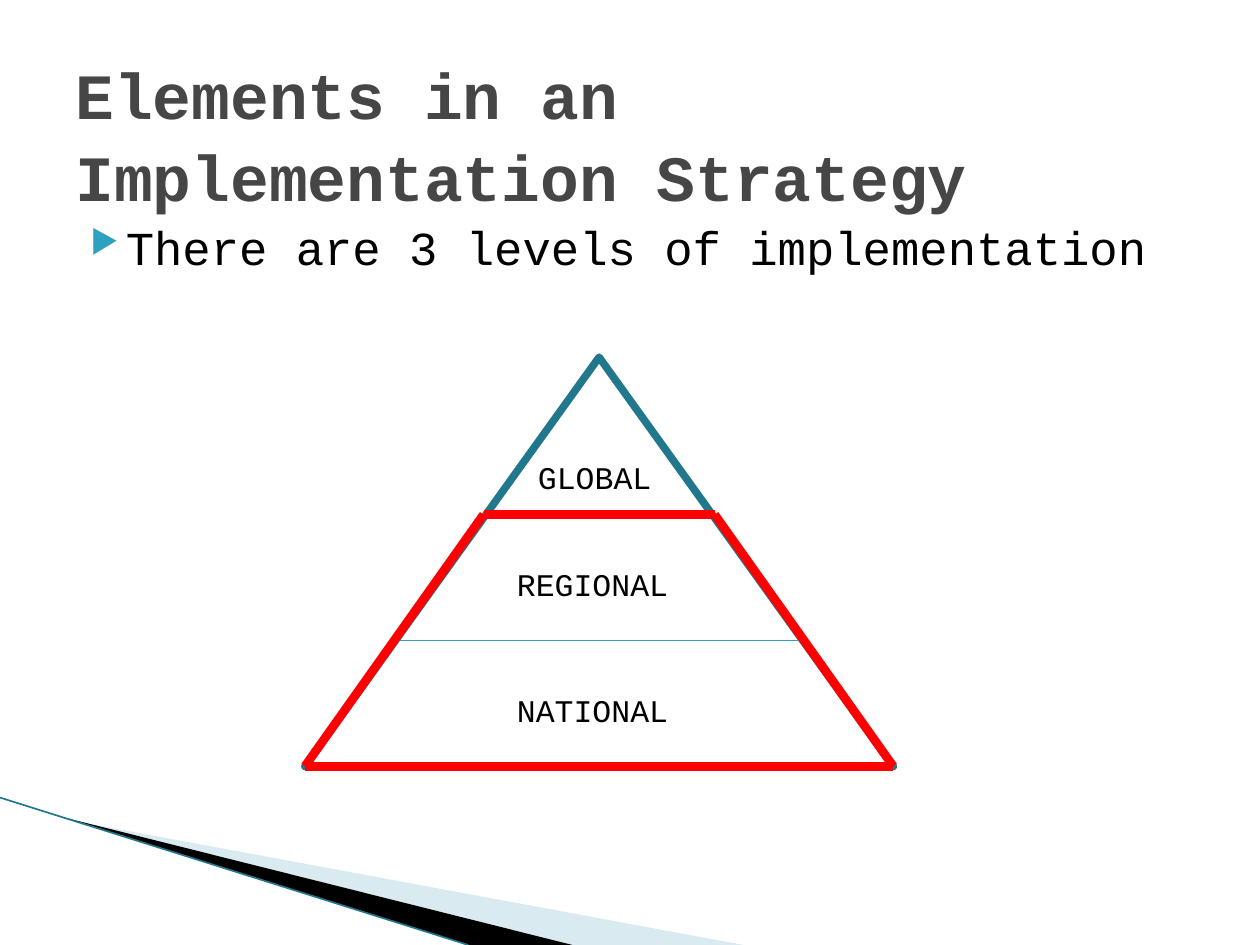
import collections

import lxml.etree
import pptx
import pptx.dml.color
import pptx.enum.shapes
import pptx.enum.text
import pptx.oxml
import pptx.oxml.ns
import pptx.util

COLORS = {
    "title": "464646",
    "text": "000000",
    "accent": "2DA2BF",
    "outline": "21788D",
    "highlight": "FF0000",
    "pale": "A0CBDC",
    "black": "000000",
}
FONT = "Courier New"
SLIDE_WIDTH, SLIDE_HEIGHT = 10, 7.5
PYRAMID_COLUMNS, PYRAMID_ROWS = 56, 13

Box = collections.namedtuple("Box", "left top width height")


def slide_box(left, top, width, height):
    """Turn shares of the slide's size into a box in inches."""
    return Box(left * SLIDE_WIDTH, top * SLIDE_HEIGHT,
               width * SLIDE_WIDTH, height * SLIDE_HEIGHT)


def point_in(box, across, down):
    """Find the point at the given shares of a box."""
    return box.left + across * box.width, box.top + down * box.height


def rgb(name):
    return pptx.dml.color.RGBColor.from_string(COLORS[name])


def add_line(slide, start, end, color, weight):
    ends = [pptx.util.Inches(length) for length in (*start, *end)]
    line = slide.shapes.add_connector(
        pptx.enum.shapes.MSO_CONNECTOR.STRAIGHT, *ends)
    line.line.color.rgb = rgb(color)
    line.line.width = pptx.util.Pt(weight)
    lxml.etree.SubElement(line._element.spPr, pptx.oxml.ns.qn("a:effectLst"))


def add_text(slide, box, text, size, color="text", bold=False, inset_top=0.05):
    """Place one run of text and return its paragraph."""
    frame = slide.shapes.add_textbox(*map(pptx.util.Inches, box)).text_frame
    frame.word_wrap = True
    frame.vertical_anchor = pptx.enum.text.MSO_ANCHOR.TOP
    frame.margin_top = pptx.util.Inches(inset_top)
    paragraph = frame.paragraphs[0]
    run = paragraph.add_run()
    run.text = text
    run.font.name = FONT
    run.font.size = pptx.util.Pt(size)
    run.font.bold = bold
    run.font.color.rgb = rgb(color)
    return paragraph


def add_bullet(paragraph):
    properties = paragraph._p.get_or_add_pPr()
    properties.set("marL", str(pptx.util.Inches(0.4)))
    properties.set("indent", str(pptx.util.Inches(-0.28)))
    namespace = pptx.oxml.ns.nsdecls("a")
    for markup in (
        f'<a:buClr {namespace}><a:srgbClr val="{COLORS["accent"]}"/></a:buClr>',
        f'<a:buSzPct {namespace} val="68000"/>',
        f'<a:buChar {namespace} char="▶"/>',
    ):
        properties.append(pptx.oxml.parse_xml(markup))


def add_wedge(slide, box, corners, color, opacity=None):
    points = [tuple(map(pptx.util.Inches, point_in(box, *corner)))
              for corner in corners]
    builder = slide.shapes.build_freeform(*points[0], scale=1.0)
    builder.add_line_segments(points[1:], close=True)
    wedge = builder.convert_to_shape()
    wedge.shadow.inherit = False
    wedge.line.fill.background()
    wedge.fill.solid()
    wedge.fill.fore_color.rgb = rgb(color)
    if opacity is not None:
        tint = wedge._element.spPr.find(".//" + pptx.oxml.ns.qn("a:srgbClr"))
        alpha = lxml.etree.SubElement(tint, pptx.oxml.ns.qn("a:alpha"))
        alpha.set("val", str(opacity * 1000))


def add_corner_sweep(slide, box):
    add_wedge(slide, box, [(0.09, 0.15), (1, 1), (0.77, 1)], "pale", 40)
    add_wedge(slide, box, [(0.09, 0.14), (0.77, 1), (0.63, 1)], "black")
    add_line(slide, point_in(box, 0, 0), point_in(box, 0.63, 1), "outline", 0.95)


def add_heading(slide, box):
    title = add_text(slide, box, "Elements in an Implementation Strategy",
                     36.9, "title", bold=True, inset_top=0.1)
    title.line_spacing = 1.06


def add_body(slide, box):
    add_bullet(add_text(slide, box, "There are 3 levels of implementation",
                        27, inset_top=0.11))


def add_pyramid(slide, box):
    """Draw the three levels, with the lower two framed in the highlight."""
    def at(column, row):
        return point_in(box, column / PYRAMID_COLUMNS, row / PYRAMID_ROWS)

    triangle = slide.shapes.add_shape(
        pptx.enum.shapes.MSO_SHAPE.ISOSCELES_TRIANGLE,
        *map(pptx.util.Inches, box))
    triangle.shadow.inherit = False
    triangle.fill.background()
    triangle.line.color.rgb = rgb("outline")
    triangle.line.width = pptx.util.Pt(4.33)

    for row, first, last in ((9, 9, 47), (5, 17, 38)):
        add_line(slide, at(first, row), at(last, row), "accent", 0.75)

    label_width, label_height = 22 / PYRAMID_COLUMNS, 1.6 / PYRAMID_ROWS
    for level, column, row in (("NATIONAL", 19, 10.4), ("REGIONAL", 19, 6.4),
                               ("GLOBAL", 21, 3)):
        label = Box(*at(column, row),
                    label_width * box.width, label_height * box.height)
        add_text(slide, label, level, 18)

    frame = [at(17, 5), at(0, 13), at(56, 13), at(39, 5)]
    for start, end in zip(frame, frame[1:] + frame[:1]):
        add_line(slide, start, end, "highlight", 5)


def main():
    deck = pptx.Presentation()
    deck.slide_width = pptx.util.Inches(SLIDE_WIDTH)
    deck.slide_height = pptx.util.Inches(SLIDE_HEIGHT)
    slide = deck.slides.add_slide(deck.slide_layouts[6])

    add_corner_sweep(slide, slide_box(0, 0.844, 0.59, 0.156))
    add_body(slide, slide_box(0.05, 0.216, 0.9, 0.66))
    add_heading(slide, slide_box(0.05, 0.04, 0.9, 0.167))
    add_pyramid(slide, slide_box(0.242, 0.378, 0.467, 0.433))
    deck.save("out.pptx")


if __name__ == "__main__":
    main()
